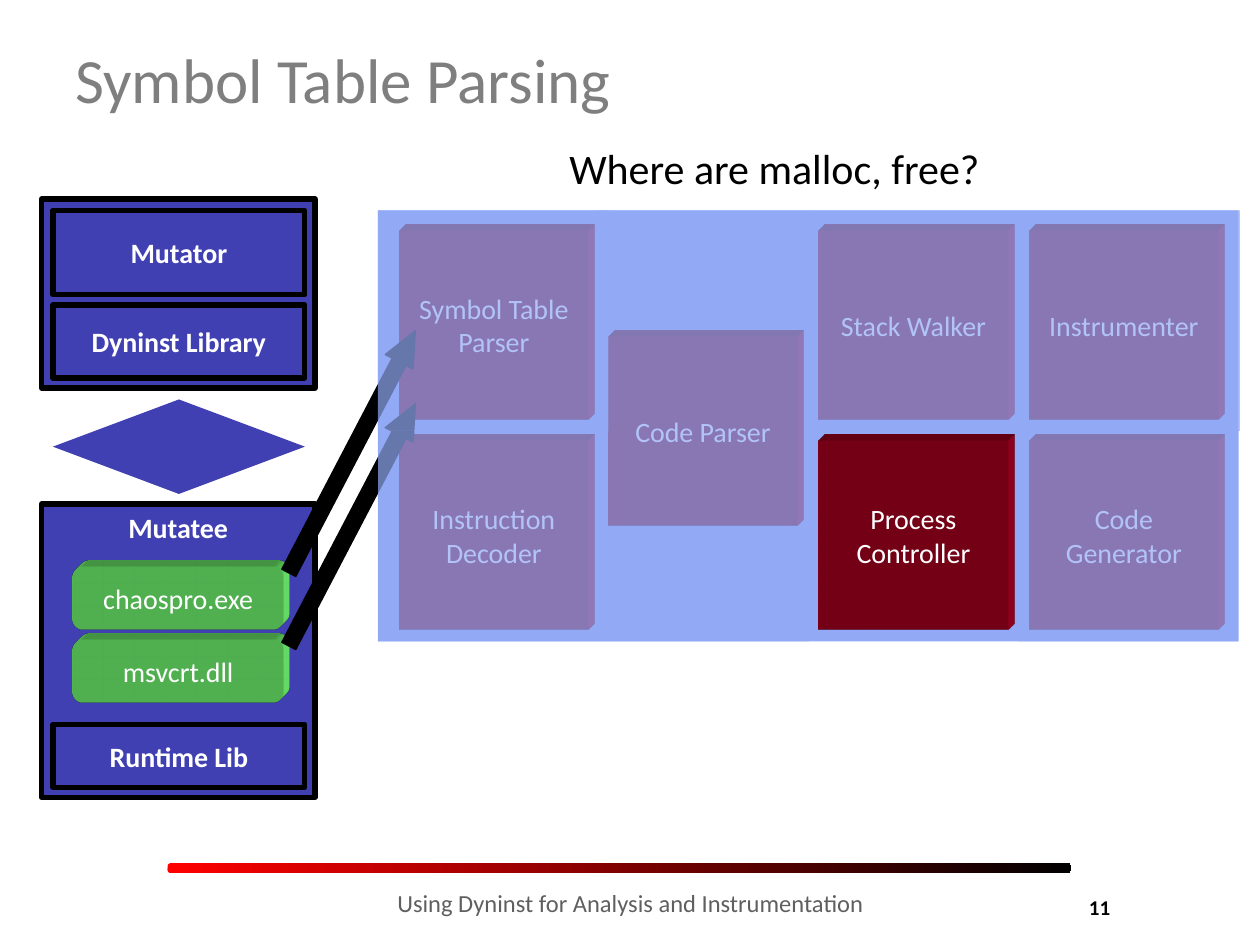
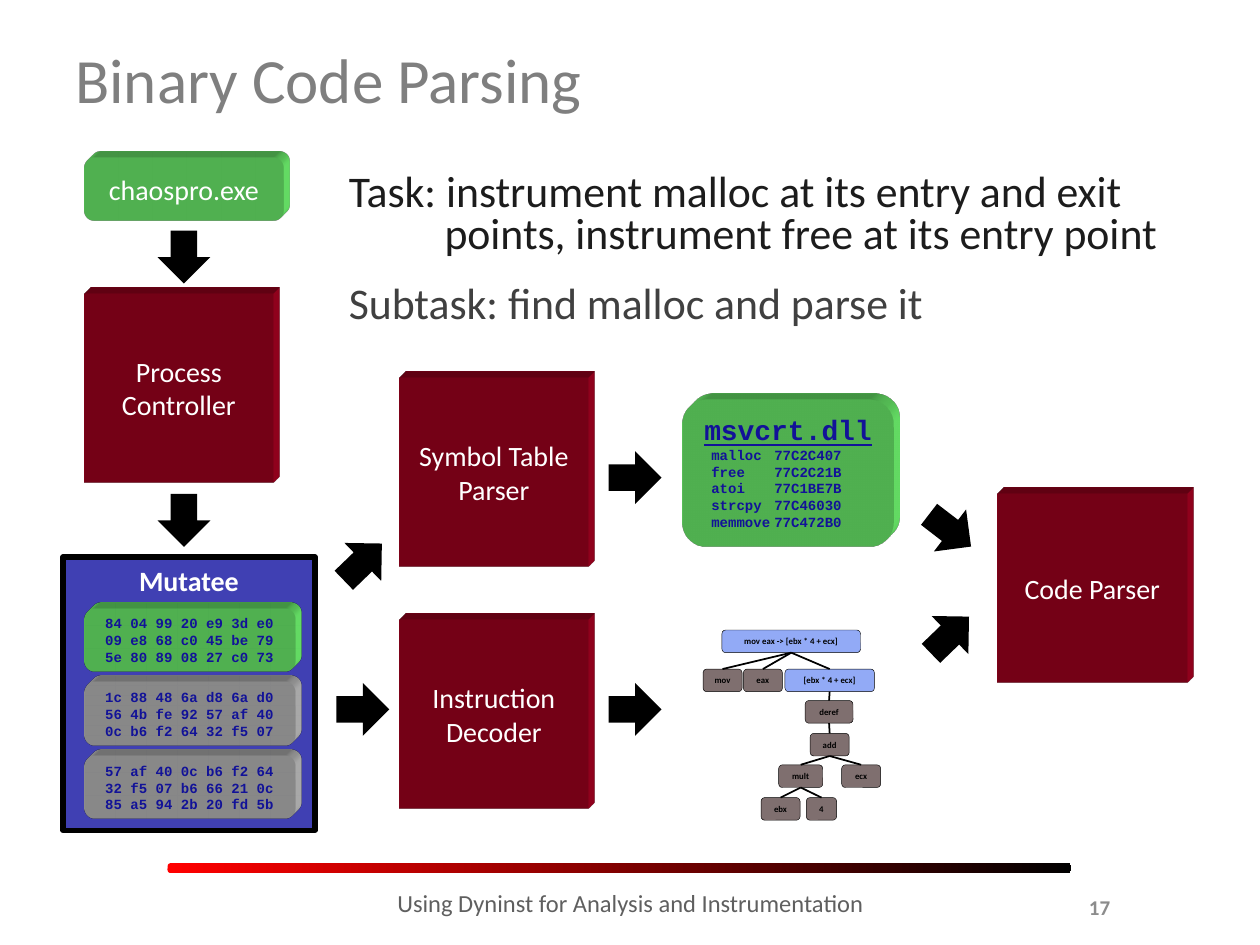
from dataclasses import dataclass, replace
from typing import Optional

import lxml.etree
import pptx
import pptx.dml.color
import pptx.enum.shapes
import pptx.enum.text
import pptx.oxml
import pptx.oxml.ns
import pptx.util

RGBColor = pptx.dml.color.RGBColor
Inches = pptx.util.Inches
Pt = pptx.util.Pt
Kind = pptx.enum.shapes.MSO_SHAPE
Align = pptx.enum.text.PP_ALIGN
Anchor = pptx.enum.text.MSO_ANCHOR
qn = pptx.oxml.ns.qn

BLACK = RGBColor(0x00, 0x00, 0x00)
WHITE = RGBColor(0xFF, 0xFF, 0xFF)
RED = RGBColor(0xFF, 0x00, 0x00)
MAROON = RGBColor(0xA5, 0x00, 0x21)
BLUE = RGBColor(0x40, 0x40, 0xB3)
SKY = RGBColor(0x92, 0xAA, 0xF6)
GREEN = RGBColor(0x71, 0xF9, 0x71)
SILVER = RGBColor(0xC0, 0xC0, 0xC0)
NAVY = RGBColor(0x12, 0x12, 0x98)
UMBER = RGBColor(0x7F, 0x6F, 0x6F)
TITLE = RGBColor(0x7F, 0x7F, 0x7F)
FOOTER = RGBColor(0x5F, 0x5F, 0x5F)
PALE = RGBColor(0x8C, 0x8C, 0x8C)
TASK = RGBColor(0x1C, 0x1C, 0x1C)
SUBTASK = RGBColor(0x40, 0x40, 0x40)

SANS = "Calibri"
MONO = "Courier New"
DEPTH = Inches(0.14)
SIDE = 1.5  # edge of a component block
HEX_GAP = 0.585
Box = tuple[float, float, float, float]


@dataclass(frozen=True)
class Font:
    size: float
    color: RGBColor
    bold: bool = False
    face: str = SANS


@dataclass(frozen=True)
class Look:
    fill: RGBColor
    font: Font = Font(16, WHITE)
    kind: Kind = Kind.RECTANGLE
    border: float = 0
    solid: bool = False
    alpha: int = 100
    wrap: bool = True
    anchor: Anchor = Anchor.MIDDLE


@dataclass(frozen=True)
class Node:
    """A tree box; parent is the index of the node above it."""
    text: str
    box: Box
    parent: Optional[int] = None
    fill: RGBColor = UMBER


BLOCK = Look(MAROON, solid=True)
FILE = Look(GREEN, kind=Kind.ROUNDED_RECTANGLE, solid=True, wrap=False)
BYTES = replace(FILE, font=Font(8, NAVY, True, MONO), wrap=True)
FRAME = Look(BLUE, Font(16, WHITE, True), border=3, wrap=False)
HOLDER = replace(FRAME, anchor=Anchor.TOP)
PANEL = Look(SKY)
VEIL = Look(SKY, alpha=70)
BEAM = Look(WHITE, alpha=25)
ARROW = Look(BLACK, kind=Kind.RIGHT_ARROW)
LEAF = Look(UMBER, Font(5, BLACK, True), Kind.ROUNDED_RECTANGLE, border=0.25, wrap=False)

BLOCKS = [
    ("Code Generator", 8.17, 3.5), ("Instrumenter", 8.17, 1.83),
    ("Stack Walker", 6.5, 1.83), ("Process Controller", 6.5, 3.5),
    ("Symbol Table Parser", 3.17, 1.83), ("Code Parser", 4.83, 2.67),
    ("Instruction Decoder", 3.17, 3.5),
]
VEILS = [
    (3, 1.67, 1.83, 1.75), (6.42, 1.67, 3.42, 1.75), (3, 3.42, 1.75, 1.67),
    (8.08, 3.42, 1.75, 1.67), (4.75, 1.67, 1.67, 3.42),
]
STEPS = [
    ("Code Parser", 7.92, 3.92), ("Instruction Decoder", 3.17, 4.92),
    ("Process Controller", 0.67, 2.33), ("Symbol Table Parser", 3.17, 3),
]
DUMPS = [
    (GREEN, "84 04 99 20 e9 3d e0 09 e8 68 c0 45 be 79 5e 80 89 08 27 c0 73"),
    (SILVER, "1c 88 48 6a d8 6a d0 56 4b fe 92 57 af 40 0c b6 f2 64 32 f5 07"),
    (SILVER, "57 af 40 0c b6 f2 64 32 f5 07 b6 66 21 0c 85 a5 94 2b 20 fd 5b"),
]
SYMBOLS = [
    ("malloc", "77C2C407"), ("free", "77C2C21B"), ("atoi", "77C1BE7B"),
    ("strcpy", "77C46030"), ("memmove", "77C472B0"),
]
FLOWS = [
    (2.67, 4.25, 316), (7.33, 4, 37.5), (1.25, 1.83, 90), (4.83, 3.58, 0),
    (4.83, 5.42, 0), (1.25, 3.92, 90), (2.67, 5.42, 0), (7.33, 4.83, 316),
]
NODES = [
    Node("mov eax -> [ebx * 4 + ecx]", (5.73, 5, 1.1, 0.18), fill=SKY),
    Node("mov", (5.58, 5.31, 0.31, 0.18), 0),
    Node("eax", (5.9, 5.31, 0.31, 0.18), 0),
    Node("[ebx * 4 + ecx]", (6.23, 5.31, 0.71, 0.18), 0, SKY),
    Node("deref", (6.39, 5.56, 0.38, 0.18), 3),
    Node("add", (6.43, 5.82, 0.31, 0.18), 4),
    Node("mult", (6.18, 6.07, 0.35, 0.18), 5),
    Node("ecx", (6.68, 6.07, 0.31, 0.18), 5),
    Node("ebx", (6.04, 6.33, 0.31, 0.18), 6),
    Node("4", (6.4, 6.33, 0.24, 0.18), 6),
]


def style(para, font: Font, align: Align = Align.LEFT) -> None:
    para.alignment = align
    for run in para.runs:
        run.font.name = font.face
        run.font.size = Pt(font.size)
        run.font.bold = font.bold
        run.font.color.rgb = font.color


def extrude(shape, color: RGBColor) -> None:
    """Give the shape a shallow body that recedes to the upper right."""
    props = shape.element.spPr
    scene = lxml.etree.SubElement(props, qn("a:scene3d"))
    lxml.etree.SubElement(scene, qn("a:camera"), prst="legacyObliqueTopRight")
    lxml.etree.SubElement(scene, qn("a:lightRig"), rig="legacyFlat3", dir="b")
    body = lxml.etree.SubElement(
        props, qn("a:sp3d"), extrusionH=str(DEPTH), prstMaterial="legacyMatte")
    tint = lxml.etree.SubElement(body, qn("a:extrusionClr"))
    lxml.etree.SubElement(tint, qn("a:srgbClr"), val=str(color))


def paint(shape, look: Look) -> None:
    shape.shadow.inherit = False
    shape.fill.solid()
    shape.fill.fore_color.rgb = look.fill
    if look.alpha < 100:
        color = shape.element.spPr.find(qn("a:solidFill"))[0]
        lxml.etree.SubElement(color, qn("a:alpha"), val=str(look.alpha * 1000))
    if look.border:
        shape.line.color.rgb = BLACK
        shape.line.width = Pt(look.border)
    else:
        shape.line.fill.background()
    if look.solid:
        extrude(shape, look.fill)


def draw(slide, look: Look, box: Box, text: str = "", turn: float = 0, adjust=()):
    shape = slide.shapes.add_shape(look.kind, *map(Inches, box))
    paint(shape, look)
    shape.rotation = turn
    for index, value in enumerate(adjust):
        shape.adjustments[index] = value
    if text:
        frame = shape.text_frame
        frame.word_wrap = look.wrap
        frame.vertical_anchor = look.anchor
        frame.text = text
        style(frame.paragraphs[0], look.font, Align.CENTER)
    return shape


def write(slide, box: Box, text: str, font: Font,
          align: Align = Align.LEFT, anchor: Anchor = Anchor.TOP):
    frame = slide.shapes.add_textbox(*map(Inches, box)).text_frame
    frame.word_wrap = True
    frame.vertical_anchor = anchor
    frame.text = text
    for para in frame.paragraphs:
        style(para, font, align)
    return frame


def indent(para, left: float, first: float = 0) -> None:
    props = para._p.get_or_add_pPr()
    props.set("marL", str(Inches(left)))
    props.set("indent", str(Inches(first)))


def start(deck, title: str, number: str, shade: RGBColor):
    """Add a slide with the title, gradient rule, footer and page number."""
    slide = deck.slides.add_slide(deck.slide_layouts[6])
    rule = draw(slide, Look(RED, kind=Kind.ROUNDED_RECTANGLE),
                (1.33, 6.85, 7.17, 0.08), adjust=(0.333,))
    rule.fill.gradient()
    rule.fill.gradient_angle = 0
    for stop, place, color in zip(rule.fill.gradient_stops, (0, 1), (RED, BLACK)):
        stop.position = place
        stop.color.rgb = color
    write(slide, (0.5, 0, 9, 1.25), title, Font(36, TITLE), anchor=Anchor.MIDDLE)
    write(slide, (2.42, 7, 5.17, 0.4), "Using Dyninst for Analysis and Instrumentation",
          Font(14, FOOTER), Align.CENTER)
    write(slide, (7.58, 7, 1.33, 0.4), number, Font(12, shade, True),
          Align.RIGHT, Anchor.MIDDLE)
    return slide


def beam(slide) -> None:
    """Spread a faint wedge from the library to the panel."""
    pen = slide.shapes.build_freeform(Inches(3), Inches(1.67))
    points = [(2.42, 2.42), (2.42, 3), (3, 5.08)]
    pen.add_line_segments([(Inches(x), Inches(y)) for x, y in points], close=True)
    paint(pen.convert_to_shape(), BEAM)


def symbols(deck) -> None:
    slide = start(deck, "Symbol Table Parsing", "11", BLACK)
    draw(slide, PANEL, (3, 1.67, 6.83, 3.42))
    draw(slide, HOLDER, (0.33, 4, 2.17, 2.33), "Mutatee")
    for text, left, top in BLOCKS:
        draw(slide, BLOCK, (left, top, SIDE, SIDE), text)
    for text, top in (("chaospro.exe", 4.5), ("msvcrt.dll", 5.08)):
        draw(slide, FILE, (0.58, top, 1.67, 0.5), text)
    draw(slide, Look(BLUE, kind=Kind.UP_DOWN_ARROW), (0.42, 3.17, 2, 0.75),
         adjust=(0.757, 0.338))
    draw(slide, FRAME, (0.42, 5.75, 2, 0.5), "Runtime Lib")
    beam(slide)
    for top in (3.46, 4.04):
        draw(slide, replace(ARROW, border=0.75), (1.71, top, 2.17, 0.25),
             turn=297.6, adjust=(0.5, 1.119))
    write(slide, (4.42, 1.08, 5.17, 0.5), "Where are malloc, free?", Font(24, BLACK))
    draw(slide, FRAME, (0.33, 1.58, 2.17, 1.5))
    draw(slide, FRAME, (0.42, 1.67, 2, 0.67), "Mutator")
    draw(slide, FRAME, (0.42, 2.42, 2, 0.58), "Dyninst Library")
    for box in VEILS:
        draw(slide, VEIL, box)


def table(slide) -> None:
    """Draw the symbol listing, its addresses lined up on a tab stop."""
    look = replace(FILE, font=Font(16, NAVY, True, MONO), anchor=Anchor.TOP, wrap=True)
    frame = draw(slide, look, (5.42, 3.17, 1.67, 1.17), "msvcrt.dll").text_frame
    frame.paragraphs[0].runs[0].font.underline = True
    for name, address in SYMBOLS:
        para = frame.add_paragraph()
        para.text = f"{name}\t{address}"
        indent(para, 0.07)
        stops = lxml.etree.SubElement(para._p.get_or_add_pPr(), qn("a:tabLst"))
        lxml.etree.SubElement(stops, qn("a:tab"), pos=str(Inches(0.74)), algn="l")
        style(para, BYTES.font)


def tree(slide) -> None:
    shapes = [draw(slide, replace(LEAF, fill=node.fill), node.box, node.text)
              for node in NODES]
    for node, shape in zip(NODES, shapes):
        if node.parent is None:
            continue
        line = slide.shapes.add_connector(
            pptx.enum.shapes.MSO_CONNECTOR.STRAIGHT, 0, 0, 0, 0)
        line.begin_connect(shapes[node.parent], 2)
        line.end_connect(shape, 0)
        line.line.color.rgb = BLACK
        line.line.width = Pt(1)
        lxml.etree.SubElement(line._element.spPr, qn("a:effectLst"))


def binary(deck) -> None:
    slide = start(deck, "Binary Code Parsing", "17", PALE)
    task = ("Task: instrument malloc at its entry and exit points, "
            "instrument free at its entry point")
    frame = write(slide, (2.67, 1.33, 7, 1.42),
                  f"{task}\nSubtask: find malloc and parse it", Font(25, TASK))
    for para, hang in zip(frame.paragraphs, (0.76, 1)):
        indent(para, hang, -hang)
        para.line_spacing = 0.8
    frame.paragraphs[1].space_before = Pt(16)
    frame.paragraphs[1].runs[0].font.color.rgb = SUBTASK
    for text, left, top in STEPS:
        draw(slide, BLOCK, (left, top, SIDE, SIDE), text)
    draw(slide, FILE, (0.67, 1.25, 1.58, 0.5), "chaospro.exe")
    draw(slide, HOLDER, (0.5, 4.42, 2, 2.17), "Mutatee")
    for row, (fill, text) in enumerate(DUMPS):
        draw(slide, replace(BYTES, fill=fill),
             (0.67, 4.83 + row * HEX_GAP, 1.67, 0.5), text)
    table(slide)
    for left, top, turn in FLOWS:
        draw(slide, ARROW, (left, top, 0.42, 0.42), turn=turn)
    tree(slide)


def main() -> None:
    deck = pptx.Presentation()
    deck.slide_width = Inches(10)
    deck.slide_height = Inches(7.5)
    symbols(deck)
    binary(deck)
    deck.save("out.pptx")


if __name__ == "__main__":
    main()
